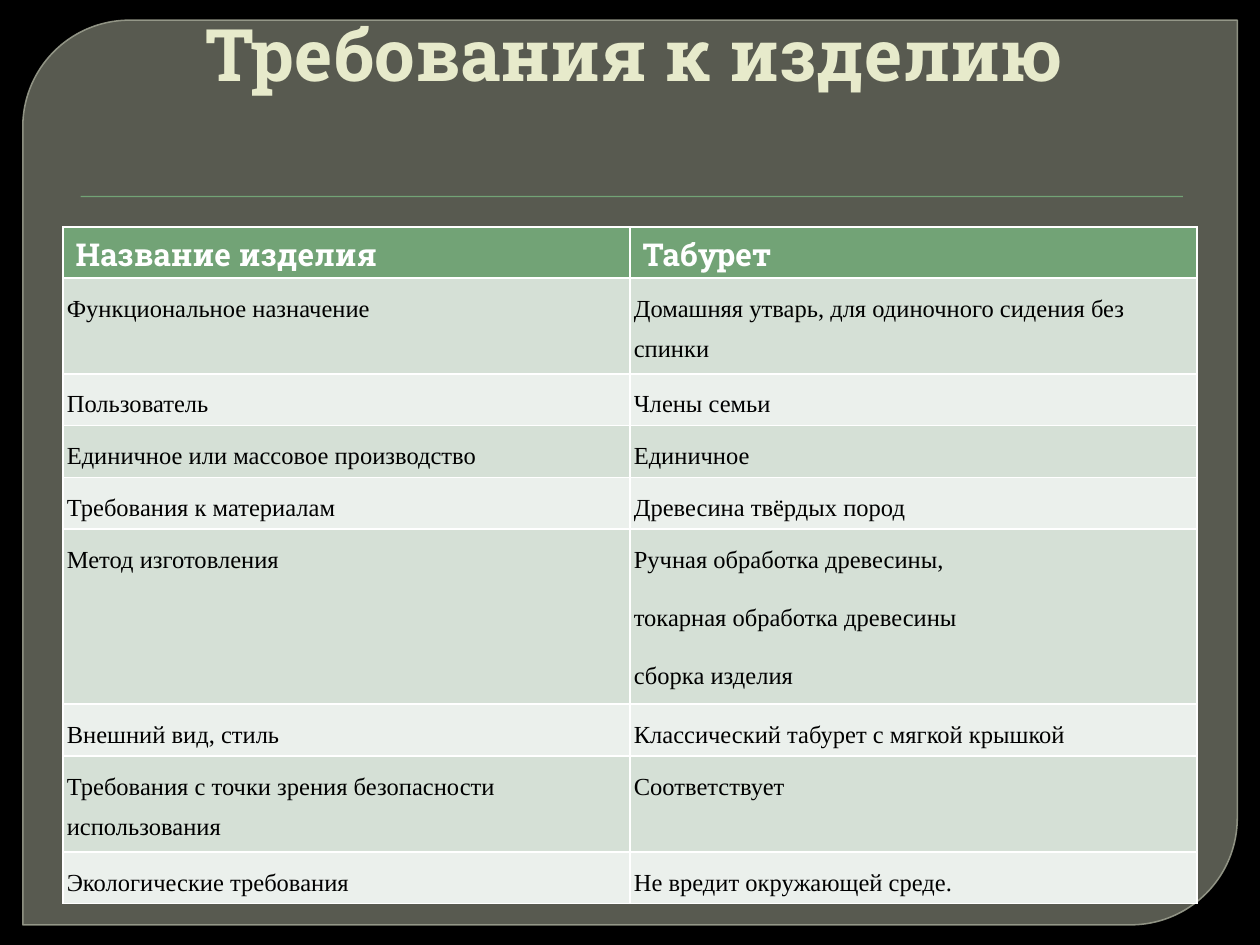
from pptx import Presentation
from pptx.dml.color import RGBColor
from pptx.enum.shapes import MSO_SHAPE
from pptx.enum.text import MSO_ANCHOR, PP_ALIGN
from pptx.oxml.ns import qn
from pptx.util import Pt
from lxml.etree import SubElement

BLACK = RGBColor(0x00, 0x00, 0x00)
WHITE = RGBColor(0xFF, 0xFF, 0xFF)
PANEL = RGBColor(0x88, 0x8B, 0x7B)
PANEL_EDGE = RGBColor(0x9D, 0xA0, 0x90)
GREEN = RGBColor(0x72, 0xA3, 0x76)
CREAM = RGBColor(0xE7, 0xEA, 0xCB)
BANDS = (RGBColor(0xD5, 0xE0, 0xD6), RGBColor(0xEB, 0xF0, 0xEC))

SLAB = "Roboto Slab"
SERIF = "Times New Roman"

ROWS = [
    ("Название изделия", "Табурет"),
    ("Функциональное назначение",
     "Домашняя утварь, для одиночного сидения без спинки"),
    ("Пользователь", "Члены семьи"),
    ("Единичное или массовое производство", "Единичное"),
    ("Требования к материалам", "Древесина твёрдых пород"),
    ("Метод изготовления",
     "Ручная обработка древесины,\nтокарная обработка древесины\nсборка изделия"),
    ("Внешний вид, стиль", "Классический табурет с мягкой крышкой"),
    ("Требования с точки зрения безопасности использования", "Соответствует"),
    ("Экологические требования", "Не вредит окружающей среде."),
]


def set_alpha(fill, percent):
    color = fill._xPr.find(qn("a:solidFill"))[0]
    SubElement(color, qn("a:alpha"), val=str(percent * 1000))


def add_filled(s, kind, box, color):
    sp = s.shapes.add_shape(kind, *map(Pt, box))
    sp.shadow.inherit = False
    sp.fill.solid()
    sp.fill.fore_color.rgb = color
    sp.line.fill.background()
    return sp


def add_panel(s):
    sp = add_filled(s, MSO_SHAPE.ROUND_2_DIAG_RECTANGLE,
                    (13, 11.5, 694, 517), PANEL)
    sp.adjustments[0] = 0.118
    sp.adjustments[1] = 0
    set_alpha(sp.fill, 65)
    sp.line.color.rgb = PANEL_EDGE
    sp.line.width = Pt(0.87)
    set_alpha(sp.line.fill, 88)


def format_runs(p, font, size, color, bold):
    for r in p.runs:
        r.font.name = font
        r.font.size = Pt(size)
        r.font.color.rgb = color
        r.font.bold = bold


def add_title(s, text):
    """The negative top inset lifts the heading to the panel's upper edge."""
    tf = s.shapes.add_textbox(Pt(36), Pt(20), Pt(648), Pt(90)).text_frame
    tf.word_wrap = True
    tf.vertical_anchor = MSO_ANCHOR.TOP
    tf.margin_top = Pt(-15)
    tf.margin_left = Pt(11.5)
    tf.text = text
    p = tf.paragraphs[0]
    p.alignment = PP_ALIGN.CENTER
    format_runs(p, SLAB, 41.4, CREAM, True)


def fill_cell(cell, text, color):
    cell.text = text
    cell.fill.solid()
    cell.fill.fore_color.rgb = color


def format_body_cell(cell):
    cell.margin_left = cell.margin_right = Pt(2.2)
    cell.margin_top = cell.margin_bottom = Pt(2.2)
    for p in cell.text_frame.paragraphs:
        p.line_spacing = 1.5
        p.space_after = Pt(10)
        format_runs(p, SERIF, 14, BLACK, False)


def add_requirements_table(s):
    row_height = 29.2
    table = s.shapes.add_table(len(ROWS), 2, Pt(36), Pt(129.6), Pt(648),
                               Pt(row_height * len(ROWS))).table
    for i, row in enumerate(ROWS):
        for j, text in enumerate(row):
            cell = table.cell(i, j)
            if i == 0:
                fill_cell(cell, text, GREEN)
                format_runs(cell.text_frame.paragraphs[0], SLAB, 18, WHITE, True)
            else:
                fill_cell(cell, text, BANDS[(i - 1) % 2])
                format_body_cell(cell)


def main():
    prs = Presentation()
    prs.slide_width, prs.slide_height = Pt(720), Pt(540)
    s = prs.slides.add_slide(prs.slide_layouts[6])
    s.background.fill.solid()
    s.background.fill.fore_color.rgb = BLACK
    add_panel(s)
    add_filled(s, MSO_SHAPE.RECTANGLE, (46, 112, 630, 0.7), GREEN)
    add_title(s, "Требования к изделию")
    add_requirements_table(s)
    prs.save("out.pptx")


if __name__ == "__main__":
    main()
